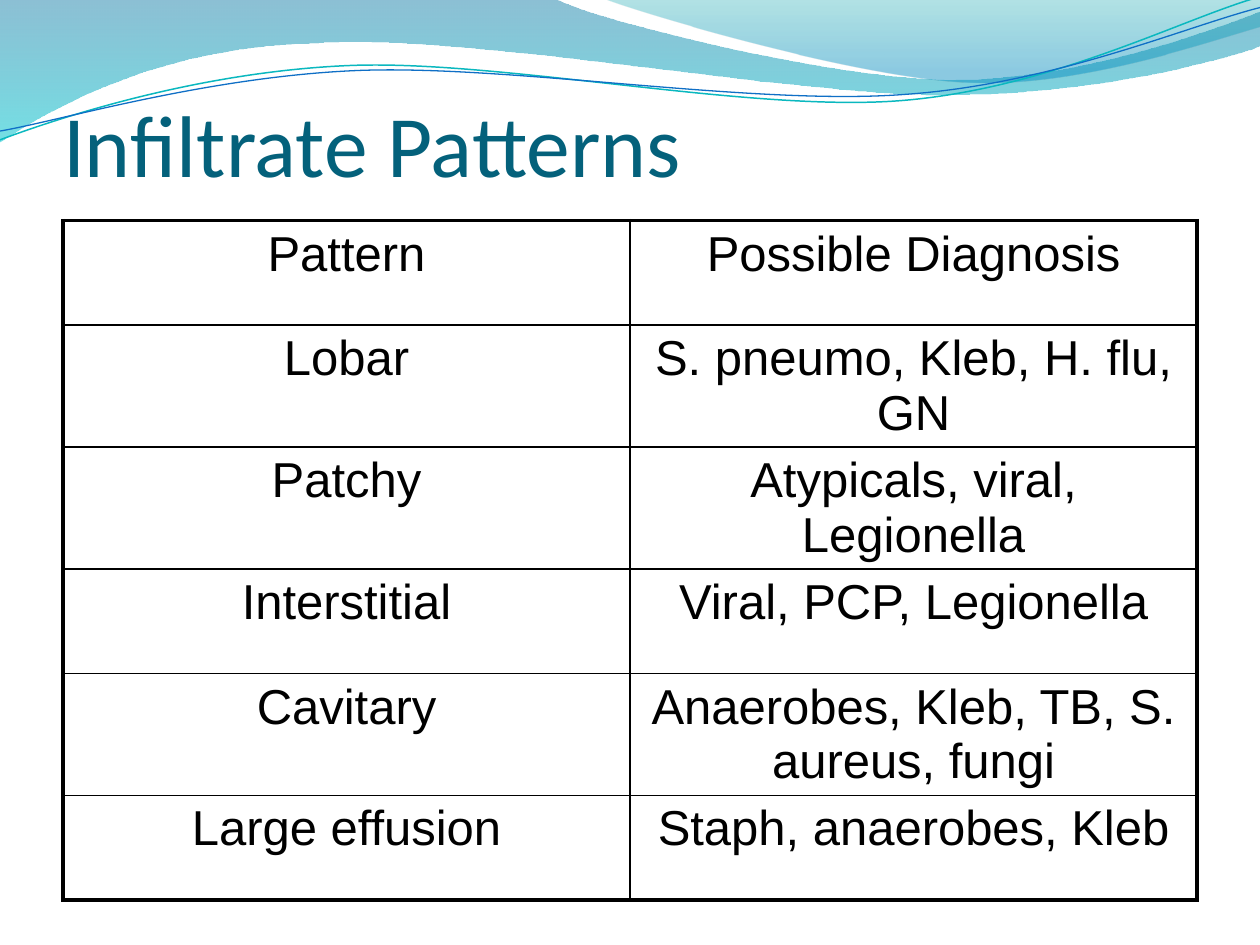
from math import cos, radians, sin

from pptx import Presentation
from pptx.dml.color import RGBColor
from pptx.enum.text import MSO_ANCHOR, MSO_AUTO_SIZE, PP_ALIGN
from pptx.oxml import parse_xml
from pptx.oxml.ns import nsdecls, qn
from pptx.oxml.xmlchemy import OxmlElement
from pptx.util import Inches, Pt

BLACK = RGBColor(0x00, 0x00, 0x00)
TITLE_TEAL = RGBColor(0x04, 0x61, 0x7B)
DEEP_BLUE = RGBColor(0x00, 0x74, 0xA1)
CYAN = RGBColor(0x00, 0xC6, 0xCF)
SEA_GREEN = RGBColor(0x00, 0xA1, 0xA9)
SKY_BLUE = RGBColor(0x00, 0x8B, 0xBF)
LINE_TEAL = RGBColor(0x0A, 0xB8, 0xBF)
LINE_BLUE = RGBColor(0x0F, 0x6F, 0xC6)

THIN, THICK = 1, 2.25
LINE_TILT = -2.7  # degrees
LINE_CENTER = (4.99, 0.58)

# Each wave is a start point, then segments of one point (straight) or three (Bezier).
# Points are inches from the corner of the header box.
WIDE_BAND = [
    [(0, 0)], [(4.4, -0.01)],
    [(4.76, 0.17), (6.64, 0.63), (7.58, 0.63)],
    [(8.53, 0.63), (9.58, 0.26), (10, 0.09)], [(10.01, 0.36)],
    [(9.83, 0.44), (8.7, 0.76), (7.46, 0.75)],
    [(6.22, 0.75), (3.82, 0.28), (2.57, 0.34)],
    [(1.29, 0.36), (0.46, 0.83), (-0.01, 1.13)], [(0, 0)],
]
RIGHT_BAND = [
    [(4.79, -0.01)],
    [(5.09, 0.11), (6.82, 0.62), (7.69, 0.65)],
    [(8.56, 0.69), (9.61, 0.32), (10, 0.21)], [(10, 0)], [(4.79, -0.01)],
]
TEAL_LINE = [
    [(0, 1.11)],
    [(0.48, 0.93), (1.58, 0.57), (2.77, 0.52)],
    [(3.95, 0.47), (5.93, 0.89), (7.13, 0.8)],
    [(8.33, 0.71), (9.38, 0.15), (9.98, -0.02)],
]
BLUE_LINE = [
    [(0, 1.04)],
    [(0.47, 0.96), (1.64, 0.61), (2.83, 0.56)],
    [(4.03, 0.51), (5.97, 0.84), (7.17, 0.75)],
    [(8.36, 0.67), (9.41, 0.21), (10, 0.06)],
]

ROWS = [
    ("Pattern", "Possible Diagnosis"),
    ("Lobar", "S. pneumo, Kleb, H. flu, GN"),
    ("Patchy", "Atypicals, viral, Legionella"),
    ("Interstitial", "Viral, PCP, Legionella"),
    ("Cavitary", "Anaerobes, Kleb, TB, S. aureus, fungi"),
    ("Large effusion", "Staph, anaerobes, Kleb"),
]


def turn(point, degrees):
    """Rotate a point clockwise about the centre of the header lines."""
    angle = radians(degrees)
    dx, dy = point[0] - LINE_CENTER[0], point[1] - LINE_CENTER[1]
    return (LINE_CENTER[0] + dx * cos(angle) - dy * sin(angle),
            LINE_CENTER[1] + dx * sin(angle) + dy * cos(angle))


def add_wave(shapes, left, top, wave, closed):
    """Lay straight segments, then join each group of three into a Bezier."""
    points = [(left + Inches(x), top + Inches(y)) for segment in wave for x, y in segment]
    builder = shapes.build_freeform(*points[0])
    builder.add_line_segments(points[1:], close=closed)
    shape = builder.convert_to_shape()
    shape.shadow.inherit = False
    straights = iter(list(shape.element.spPr.iter(qn("a:lnTo"))))
    for segment in wave[1:]:
        parts = [next(straights) for _ in segment]
        if len(parts) == 3:
            curve = OxmlElement("a:cubicBezTo")
            parts[0].addprevious(curve)
            for part in parts:
                curve.append(part[0])
                part.getparent().remove(part)
    return shape


def add_band(shapes, left, top, wave, stops):
    """Add a filled wave; stops are (position %, colour, opacity %)."""
    band = add_wave(shapes, left, top, wave, True)
    band.line.fill.background()
    band.fill.gradient()
    band.fill.gradient_angle = 270
    for stop, (_, color, _) in zip(band.fill.gradient_stops, stops):
        stop.color.rgb = color
    for node, (position, _, opacity) in zip(band.element.spPr.iter(qn("a:gs")), stops):
        node.set("pos", str(position * 1000))
        alpha = OxmlElement("a:alpha")
        alpha.set("val", str(opacity * 1000))
        node[0].append(alpha)


def add_header(page, left, top):
    add_band(page.shapes, left, top, WIDE_BAND, [(0, DEEP_BLUE, 45), (100, CYAN, 55)])
    add_band(page.shapes, left, top, RIGHT_BAND, [(0, SEA_GREEN, 30), (80, SKY_BLUE, 45)])
    group = page.shapes.add_group_shape()
    for wave, color, width in ((TEAL_LINE, LINE_TEAL, 0.85), (BLUE_LINE, LINE_BLUE, 0.75)):
        level = [[turn(point, -LINE_TILT) for point in segment] for segment in wave]
        line = add_wave(group.shapes, left, top, level, False)
        line.rotation = LINE_TILT
        line.fill.background()
        line.line.color.rgb = color
        line.line.width = Pt(width)


def place_title(page, left, top, width, height):
    title = page.shapes.title
    title.left, title.top, title.width, title.height = left, top, width, height
    title.element.getparent().append(title.element)  # in front of the waves
    frame = title.text_frame
    frame.text = "Infiltrate Patterns"
    frame.auto_size = MSO_AUTO_SIZE.NONE
    frame.vertical_anchor = MSO_ANCHOR.BOTTOM
    frame.margin_left = frame.margin_right = frame.margin_bottom = 0
    para = frame.paragraphs[0]
    para.alignment = PP_ALIGN.LEFT
    para.font.name = "Calibri"
    para.font.size = Pt(50)
    para.font.color.rgb = TITLE_TEAL


def set_borders(cell, widths):
    """Draw black borders; widths are points for left, right, top, bottom."""
    properties = cell._tc.get_or_add_tcPr()
    for index, (side, width) in enumerate(zip("LRTB", widths)):
        properties.insert(index, parse_xml(
            f'<a:ln{side} {nsdecls("a")} w="{Pt(width)}"><a:solidFill>'
            f'<a:srgbClr val="{BLACK}"/></a:solidFill></a:ln{side}>'))


def add_pattern_table(page, left, top, width, height):
    row_count, column_count = len(ROWS), len(ROWS[0])
    frame = page.shapes.add_table(row_count, column_count, left, top, width, height)
    table = frame.table
    table.first_row = table.horz_banding = False
    for row in table.rows:
        row.height = Inches(0.83)  # rows with two lines of text grow
    frame.height = height
    for r, texts in enumerate(ROWS):
        for c, text in enumerate(texts):
            cell = table.cell(r, c)
            cell.text = text
            cell.fill.background()
            outer = (c == 0, c == column_count - 1, r == 0, r == row_count - 1)
            set_borders(cell, [THICK if edge else THIN for edge in outer])
            para = cell.text_frame.paragraphs[0]
            para.alignment = PP_ALIGN.CENTER
            para.space_before = Pt(5.6)
            para.font.name = "Arial"
            para.font.size = Pt(28)
            para.font.color.rgb = BLACK


def main():
    deck = Presentation()
    deck.slide_width, deck.slide_height = Inches(10), Inches(7.5)
    page = deck.slides.add_slide(deck.slide_layouts[5])
    add_header(page, 0, 0)
    place_title(page, Inches(0.5), Inches(0.3), Inches(9), Inches(1.25))
    add_pattern_table(page, Inches(0.5), Inches(1.75), Inches(9), Inches(5.58))
    deck.save("out.pptx")


if __name__ == "__main__":
    main()
